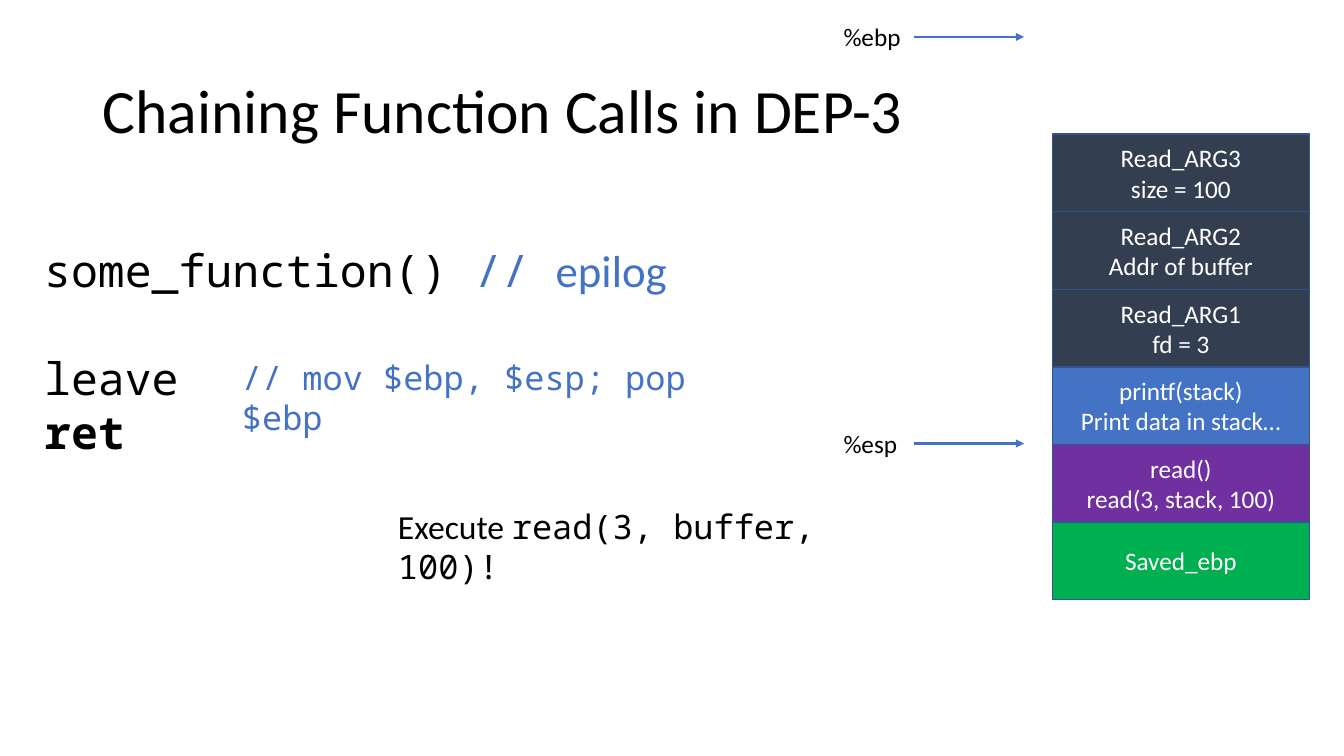
from lxml import etree
from pptx import Presentation, util as u
from pptx.dml.color import RGBColor
from pptx.enum import shapes, text
from pptx.oxml.ns import qn

# Square grid cells, three to the inch
COLUMNS, ROWS = 40, 22.5
SANS, MONO = "Calibri", "Noto Sans Mono"
BLACK, WHITE, BLUE, EDGE, SLATE = "000000", "FFFFFF", "4472C4", "325491", "333F50"

STACK = [
    ("Read_ARG3\nsize = 100", SLATE),
    ("Read_ARG2\nAddr of buffer", SLATE),
    ("Read_ARG1\nfd = 3", SLATE),
    ("printf(stack)\nPrint data in stack…", BLUE),
    ("read()\nread(3, stack, 100)", "7030A0"),
    ("Saved_ebp", "00B050"),
]

prs = Presentation()
prs.slide_width, prs.slide_height = u.Inches(13.33), u.Inches(7.5)


def place(*cells):
    """Turn alternating columns and rows into slide lengths."""
    steps = (prs.slide_width / COLUMNS, prs.slide_height / ROWS)
    return [u.Emu(round(cell * steps[i % 2])) for i, cell in enumerate(cells)]


def colour(hex_code):
    return RGBColor.from_string(hex_code)


def style(font, size, face=SANS, ink=BLACK, bold=False):
    font.size, font.name, font.bold = u.Pt(size), face, bold
    font.color.rgb = colour(ink)


def add_text(slide, box, lines, size):
    """Each line is a list of (words, face, ink, bold) pieces."""
    frame = slide.shapes.add_textbox(*place(*box)).text_frame
    frame.word_wrap = True
    for i, pieces in enumerate(lines):
        paragraph = frame.add_paragraph() if i else frame.paragraphs[0]
        for words, *look in pieces:
            run = paragraph.add_run()
            run.text = words
            style(run.font, size, *look)
    return frame


def add_title(slide, box):
    frame = add_text(slide, box, [[("Chaining Function Calls in DEP-3",)]], 44)
    frame.vertical_anchor = text.MSO_ANCHOR.MIDDLE
    frame.paragraphs[0].line_spacing = 0.9


def add_stack(slide, box):
    left, top, width, height = box
    step = height / len(STACK)
    for i, (words, fill) in enumerate(STACK):
        slot = slide.shapes.add_shape(
            shapes.MSO_SHAPE.RECTANGLE, *place(left, top + i * step, width, step))
        slot.shadow.inherit = False
        slot.fill.solid()
        slot.fill.fore_color.rgb = colour(fill)
        slot.line.color.rgb = colour(EDGE)
        slot.line.width = u.Pt(1)
        slot.text_frame.text = words
        slot.text_frame.vertical_anchor = text.MSO_ANCHOR.MIDDLE
        for paragraph in slot.text_frame.paragraphs:
            paragraph.alignment = text.PP_ALIGN.CENTER
            style(paragraph.runs[0].font, 18, ink=WHITE)


def add_register(slide, box, register):
    """Register label followed by an arrow to the stack."""
    left, top, width, height = box
    label_width = width * 0.42
    middle = top + height / 2
    add_text(slide, (left, top, label_width, height), [[(register,)]], 18)
    arrow = slide.shapes.add_connector(
        shapes.MSO_CONNECTOR.STRAIGHT,
        *place(left + label_width, middle, left + width, middle))
    arrow.line.color.rgb = colour(BLUE)
    arrow.line.width = u.Pt(1.5)
    etree.SubElement(arrow.line._get_or_add_ln(), qn("a:tailEnd"), type="triangle")
    etree.SubElement(arrow._element.spPr, qn("a:effectLst"))


def add_code(slide, box):
    """Function epilogue, with the note that explains leave."""
    left, top, width, height = box
    frame = add_text(slide, box, [
        [("some_function() ", MONO), ("// ", MONO, BLUE), ("epilog", SANS, BLUE)],
        [("leave", MONO)],
        [("ret", MONO, BLACK, True)],
    ], 32)
    frame.paragraphs[1].space_before = u.Pt(38.5)
    note = (left + width * 0.3, top + height * 0.5, width * 0.8, height * 0.22)
    add_text(slide, note, [[("// mov $ebp, $esp; pop $ebp", MONO, BLUE)]], 24)


def add_result(slide, box):
    add_text(slide, box, [[("Execute ",), ("read(3, buffer, 100)!", MONO)]], 24)


def main():
    slide = prs.slides.add_slide(prs.slide_layouts[6])
    add_title(slide, (2.76, 1.2, 34.5, 4.35))
    add_stack(slide, (31.32, 3.99, 7.65, 13.86))
    for register, top in (("%esp", 12.6), ("%ebp", 0.5)):
        add_register(slide, (24.81, top, 5.67, 1.2), register)
    add_result(slide, (11.55, 14.91, 16.11, 1.5))
    add_code(slide, (1.02, 7.08, 19.62, 6.78))
    prs.save("out.pptx")


if __name__ == "__main__":
    main()
